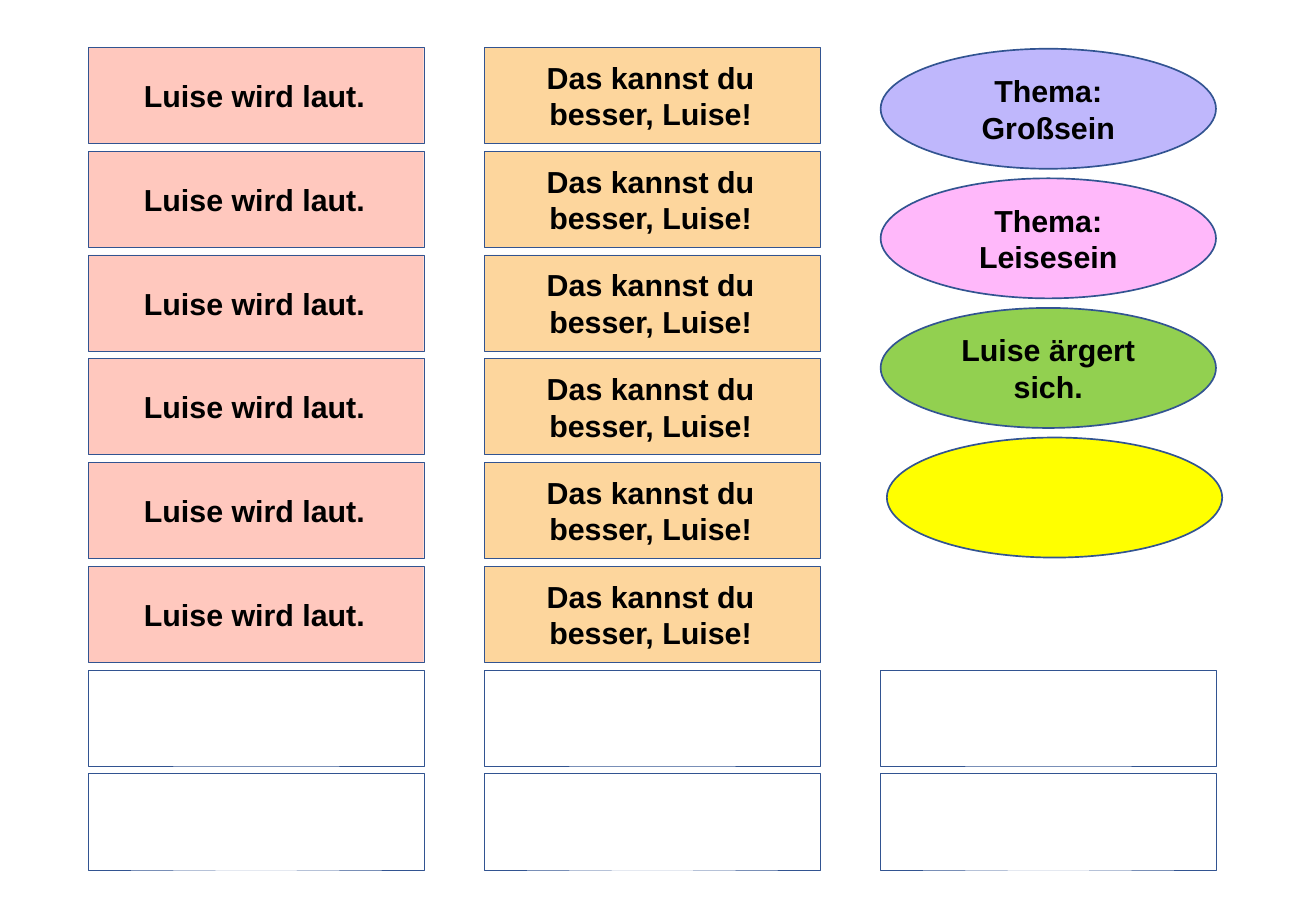
import pptx
import pptx.dml.color
import pptx.enum.shapes
import pptx.enum.text
import pptx.util

Cm = pptx.util.Cm
Shapes = pptx.enum.shapes.MSO_SHAPE

COLOURS = {
    "outline": "325491",
    "text": "000000",
    "rose": "FFC8BE",
    "apricot": "FDD69D",
    "lilac": "BFB7FC",
    "pink": "FFB8FA",
    "green": "92D050",
    "yellow": "FFFF00",
}

# Grid in centimetres
COLUMNS = [1.85 + 8.28 * column for column in range(3)]
CARD_TOP, CARD_PITCH, CARD_HEIGHT = 0.99, 2.17, 2.01
OVAL_TOP, OVAL_PITCH, OVAL_HEIGHT = 1.02, 2.71, 2.51
WIDTH = 7.01
FILLED_ROWS, ALL_ROWS = 6, 8


class CardSheet:
    """Holds the text style and the current slide."""

    font_name = "Arial"
    font_size = 18

    def __init__(self, presentation):
        self.slide = presentation.slides.add_slide(presentation.slide_layouts[6])

    def colour(self, name):
        return pptx.dml.color.RGBColor.from_string(COLOURS[name])

    def add_outlined(self, kind, left, top, height, line_width, fill, text):
        shape = self.slide.shapes.add_shape(
            kind, Cm(left), Cm(top), Cm(WIDTH), Cm(height))
        shape.shadow.inherit = False
        shape.line.color.rgb = self.colour("outline")
        shape.line.width = pptx.util.Pt(line_width)
        if fill:
            shape.fill.solid()
            shape.fill.fore_color.rgb = self.colour(fill)
        else:
            shape.fill.background()
        if text:
            self.set_text(shape.text_frame, text)
        return shape

    def set_text(self, frame, text):
        frame.word_wrap = True
        frame.vertical_anchor = pptx.enum.text.MSO_ANCHOR.MIDDLE
        paragraph = frame.paragraphs[0]
        paragraph.text = text
        paragraph.alignment = pptx.enum.text.PP_ALIGN.CENTER
        paragraph.font.name = self.font_name
        paragraph.font.size = pptx.util.Pt(self.font_size)
        paragraph.font.bold = True
        paragraph.font.color.rgb = self.colour("text")

    def card(self, column, row, fill=None, text=None):
        shape = self.add_outlined(
            Shapes.RECTANGLE, COLUMNS[column], CARD_TOP + row * CARD_PITCH,
            CARD_HEIGHT, 0.25, fill, text)
        shape.text_frame.margin_right = Cm(0.32)

    def oval(self, row, fill, text=None, shift=0):
        self.add_outlined(
            Shapes.OVAL, COLUMNS[2] + shift, OVAL_TOP + row * OVAL_PITCH,
            OVAL_HEIGHT, 1, fill, text)


def main():
    presentation = pptx.Presentation()
    presentation.slide_width = Cm(27.51)
    presentation.slide_height = Cm(19.05)
    sheet = CardSheet(presentation)

    # Sentence cards in the first two columns
    sentences = [
        ("rose", "Luise wird laut."),
        ("apricot", "Das kannst du besser, Luise!"),
    ]
    for column, (fill, text) in enumerate(sentences):
        for row in range(FILLED_ROWS):
            sheet.card(column, row, fill, text)

    # Empty cards at the foot of every column
    for column in range(len(COLUMNS)):
        for row in range(FILLED_ROWS, ALL_ROWS):
            sheet.card(column, row)

    # Topic ovals, the last one blank and slightly to the right
    topics = [
        ("lilac", "Thema: Großsein", 0),
        ("pink", "Thema: Leisesein", 0),
        ("green", "Luise ärgert sich.", 0),
        ("yellow", None, 0.13),
    ]
    for row, (fill, text, shift) in enumerate(topics):
        sheet.oval(row, fill, text, shift)

    presentation.save("out.pptx")


if __name__ == "__main__":
    main()
